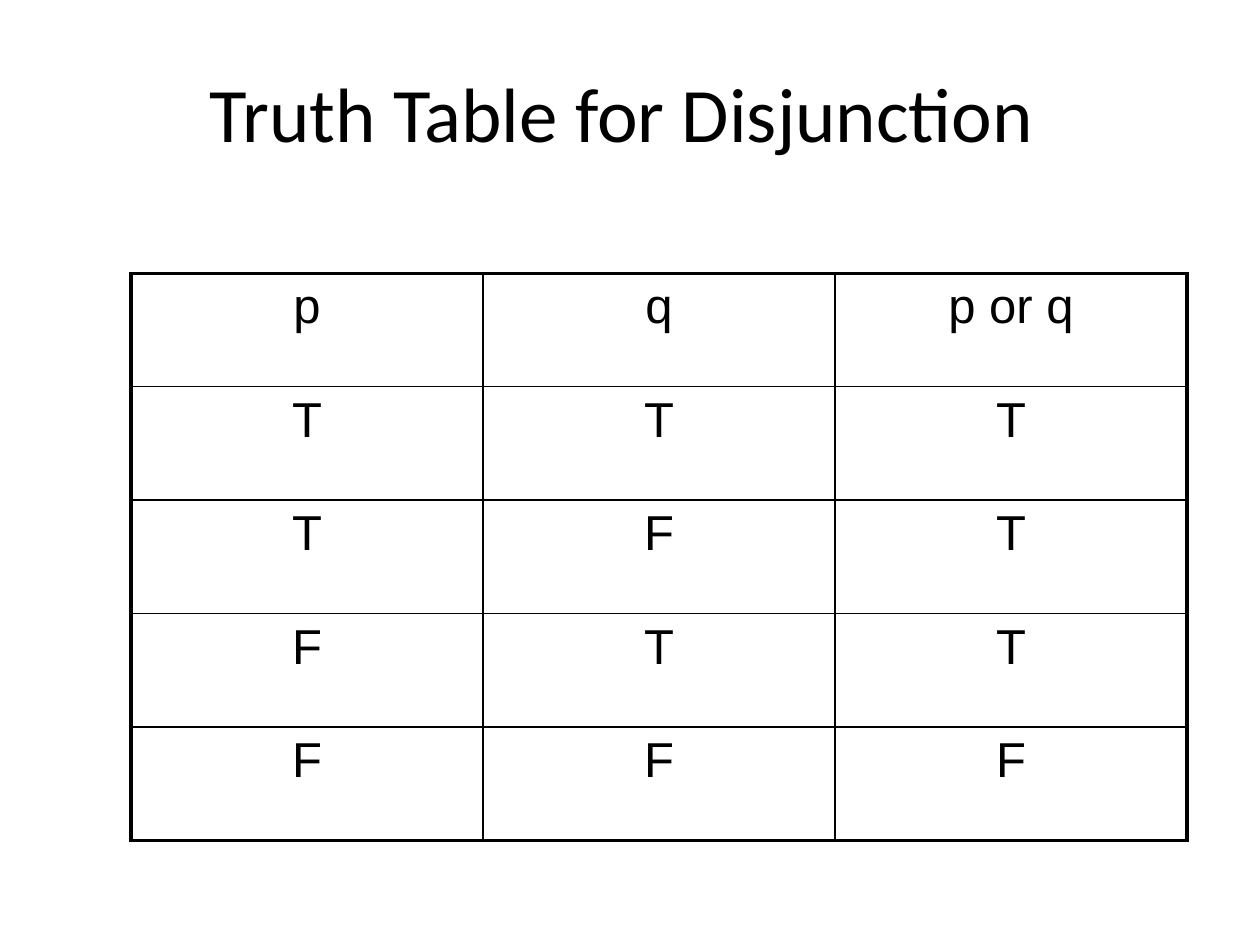
import lxml.etree
import pptx
import pptx.dml.color
import pptx.enum.text
import pptx.oxml.ns
import pptx.util
from pptx.util import Cm, Pt

COLORS = {"ink": "000000", "paper": "FFFFFF"}
TITLE_FONT = {"name": "Calibri", "size": Pt(44), "bold": False}
CELL_FONT = {"name": "Arial", "size": Pt(28), "bold": False}
OUTER_LINE, INNER_LINE = Pt(2.25), Pt(1)
TRUTH_ROWS = [
    ("p", "q", "p or q"),
    ("T", "T", "T"),
    ("T", "F", "T"),
    ("F", "T", "T"),
    ("F", "F", "F"),
]


def color(name):
    return pptx.dml.color.RGBColor.from_string(COLORS[name])


def add_element(parent, tag, **attributes):
    element = lxml.etree.SubElement(parent, pptx.oxml.ns.qn(tag))
    for name, value in attributes.items():
        element.set(name, str(value))
    return element


def format_paragraph(paragraph, font_format):
    paragraph.alignment = pptx.enum.text.PP_ALIGN.CENTER
    for name, value in font_format.items():
        setattr(paragraph.font, name, value)
        for run in paragraph.runs:
            setattr(run.font, name, value)
    for run in paragraph.runs:
        run.font.color.rgb = color("ink")


def set_borders(cell, widths):
    """Draw the cell borders; widths maps L, R, T and B, in that order."""
    properties = cell._tc.get_or_add_tcPr()
    for position, (side, width) in enumerate(widths.items()):
        line = add_element(properties, f"a:ln{side}", w=int(width))
        fill = add_element(line, "a:solidFill")
        add_element(fill, "a:srgbClr", val=COLORS["ink"])
        properties.insert(position, line)


def place_title(slide, text, left, top, width, height):
    title = slide.shapes.title
    box = {"left": left, "top": top, "width": width, "height": height}
    for name, value in box.items():
        setattr(title, name, value)
    title.text_frame.text = text
    title.text_frame.vertical_anchor = pptx.enum.text.MSO_ANCHOR.MIDDLE
    format_paragraph(title.text_frame.paragraphs[0], TITLE_FONT)


def fill_cell(cell, text):
    cell.text = text
    cell.fill.solid()
    cell.fill.fore_color.rgb = color("paper")
    paragraph = cell.text_frame.paragraphs[0]
    format_paragraph(paragraph, CELL_FONT)
    spacing = lxml.etree.Element(pptx.oxml.ns.qn("a:spcBef"))
    add_element(spacing, "a:spcPct", val=20000)
    paragraph._p.get_or_add_pPr().insert(0, spacing)


def place_truth_table(slide, rows, left, top, width, height):
    row_count, column_count = len(rows), len(rows[0])
    table = slide.shapes.add_table(
        row_count, column_count, left, top, width, height
    ).table
    table.first_row = table.horz_banding = False
    for row_index, row in enumerate(rows):
        for column_index, text in enumerate(row):
            cell = table.cell(row_index, column_index)
            fill_cell(cell, text)
            on_edge = {
                "L": column_index == 0,
                "R": column_index == column_count - 1,
                "T": row_index == 0,
                "B": row_index == row_count - 1,
            }
            set_borders(cell, {
                side: OUTER_LINE if outer else INNER_LINE
                for side, outer in on_edge.items()
            })


def main():
    presentation = pptx.Presentation()
    presentation.slide_width, presentation.slide_height = Cm(25.4), Cm(19.05)
    slide = presentation.slides.add_slide(presentation.slide_layouts[5])
    slide.background.fill.solid()
    slide.background.fill.fore_color.rgb = color("paper")
    place_title(slide, "Truth Table for Disjunction",
                Cm(2.59), Cm(0.28), Cm(19.89), Cm(3.94))
    place_truth_table(slide, TRUTH_ROWS,
                      Cm(2.64), Cm(5.51), Cm(21.29), Cm(11.43))
    presentation.save("out.pptx")


if __name__ == "__main__":
    main()
